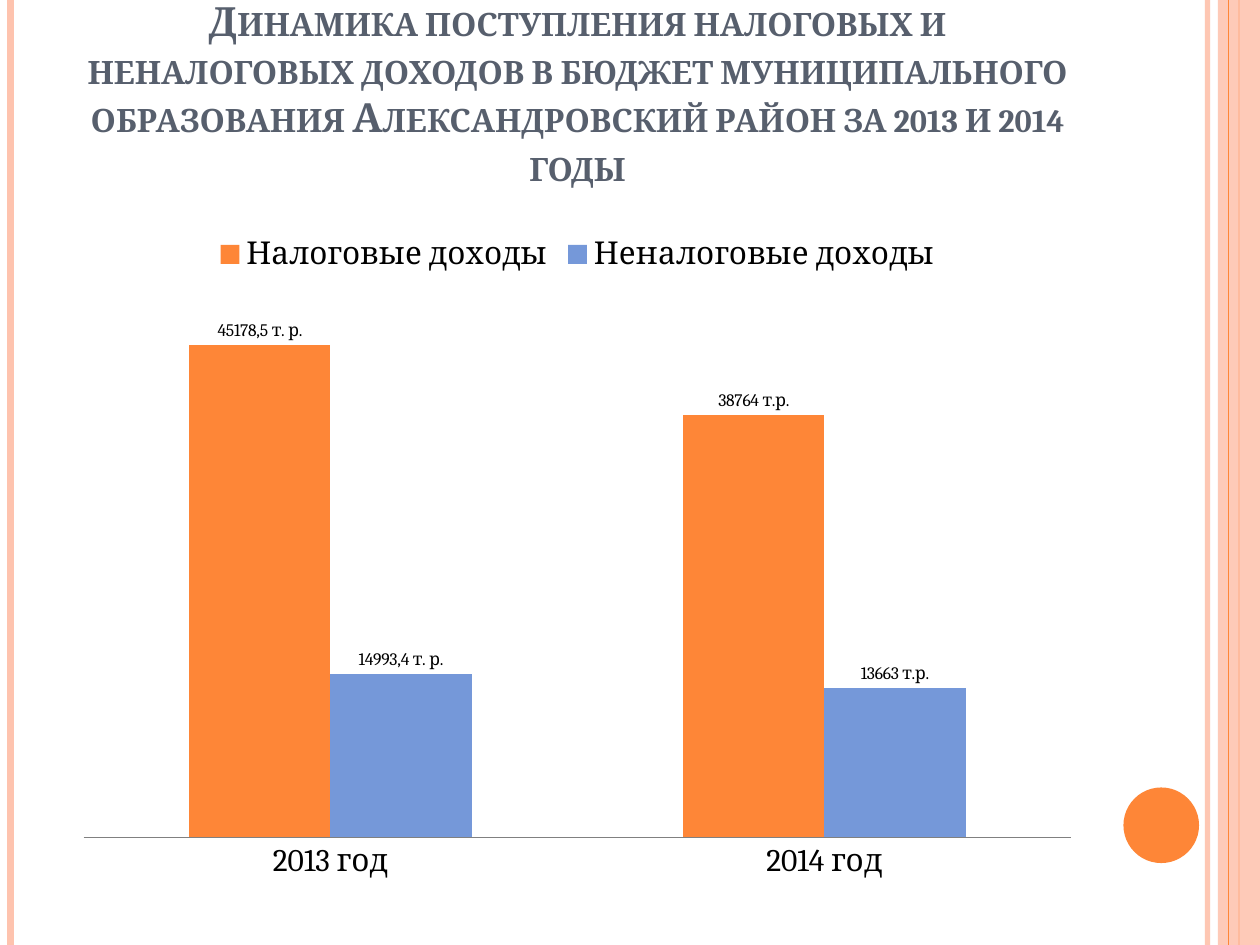
import dataclasses

import lxml.etree
import pptx
import pptx.chart.data
import pptx.dml.color
import pptx.enum.chart
import pptx.enum.shapes
import pptx.enum.text
import pptx.oxml.ns
import pptx.util

Pt = pptx.util.Pt
qn = pptx.oxml.ns.qn
FONT = "Cambria"
WIDTH, HEIGHT = 720, 540
COLORS = {
    "orange": "FE8637",
    "peach": "FEC3AE",
    "blue": "7598D9",
    "slate": "575F6D",
    "axis": "808080",
    "black": "000000",
}
TITLE = (
    "Динамика поступления налоговых и неналоговых доходов в бюджет "
    "муниципального образования Александровский район за 2013 и 2014 годы"
)
YEARS = ["2013 год", "2014 год"]


@dataclasses.dataclass
class Stripe:
    x: float
    weight: float
    color: str
    alpha: int = 100


@dataclasses.dataclass
class Income:
    name: str
    color: str
    values: list[float]
    labels: list[str]


BACK_STRIPES = [
    Stripe(690, 3, "peach", 93),
    Stripe(6, 4.5, "peach"),
    Stripe(708, 1.5, "orange"),
]
FRONT_STRIPE = Stripe(702, 0.75, "orange")
INCOMES = [
    Income("Налоговые доходы", "orange", [45178.5, 38764], ["45178,5 т. р.", "38764 т.р."]),
    Income("Неналоговые доходы", "blue", [14993.4, 13663], ["14993,4 т. р.", "13663 т.р."]),
]


def rgb(name: str) -> pptx.dml.color.RGBColor:
    """Return the named palette colour."""
    return pptx.dml.color.RGBColor.from_string(COLORS[name])


def set_alpha(element, percent: int) -> None:
    """Make the first colour inside the element translucent."""
    clr = next(element.iter(qn("a:srgbClr")))
    lxml.etree.SubElement(clr, qn("a:alpha")).set("val", str(percent * 1000))


def style_font(font, size: float, color: str = "black") -> None:
    """Apply the slide typeface, a size and a colour."""
    font.name = FONT
    font.size = Pt(size)
    font.color.rgb = rgb(color)


def add_stripe(s, stripe: Stripe) -> None:
    """Draw a vertical line over the full slide height."""
    line = s.shapes.add_connector(
        pptx.enum.shapes.MSO_CONNECTOR.STRAIGHT, Pt(stripe.x), 0, Pt(stripe.x), Pt(HEIGHT)
    )
    line.line.color.rgb = rgb(stripe.color)
    line.line.width = Pt(stripe.weight)
    sppr = line._element.spPr
    lxml.etree.SubElement(sppr, qn("a:effectLst"))
    if stripe.alpha < 100:
        set_alpha(sppr, stripe.alpha)


def add_block(s, kind, x: float, y: float, w: float, h: float, color: str):
    """Draw a filled shape without outline."""
    sp = s.shapes.add_shape(kind, Pt(x), Pt(y), Pt(w), Pt(h))
    sp.shadow.inherit = False
    sp.fill.solid()
    sp.fill.fore_color.rgb = rgb(color)
    sp.line.fill.background()
    return sp


def add_title(s) -> None:
    """Write the small-caps heading, anchored to the bottom of its box."""
    sp = s.shapes.add_textbox(Pt(36), Pt(21.6), Pt(588), Pt(90))
    tf = sp.text_frame
    tf.word_wrap = True
    tf.vertical_anchor = pptx.enum.text.MSO_ANCHOR.BOTTOM
    p = tf.paragraphs[0]
    p.alignment = pptx.enum.text.PP_ALIGN.CENTER
    r = p.add_run()
    r.text = TITLE
    style_font(r.font, 23, "slate")
    r.font.bold = True
    r.font._element.set("cap", "small")


def style_series(series, income: Income) -> None:
    """Colour a series and label each of its columns."""
    outside = pptx.enum.chart.XL_LABEL_POSITION.OUTSIDE_END
    series.format.fill.solid()
    series.format.fill.fore_color.rgb = rgb(income.color)
    series.invert_if_negative = False
    labels = series.data_labels
    labels.show_value = True
    labels.position = outside
    style_font(labels.font, 10)
    for point, text in zip(series.points, income.labels):
        label = point.data_label
        r = label.text_frame.paragraphs[0].add_run()
        r.text = text
        style_font(r.font, 10)
        label.position = outside


def add_income_chart(s) -> None:
    """Add the clustered column chart of incomes by year."""
    data = pptx.chart.data.CategoryChartData()
    data.categories = YEARS
    for income in INCOMES:
        data.add_series(income.name, income.values)
    chart = s.shapes.add_chart(
        pptx.enum.chart.XL_CHART_TYPE.COLUMN_CLUSTERED, Pt(36), Pt(126), Pt(588), Pt(384), data
    ).chart
    style_font(chart.font, 18)
    chart.has_title = False
    chart.has_legend = True
    chart.legend.position = pptx.enum.chart.XL_LEGEND_POSITION.TOP
    chart.legend.include_in_layout = False
    chart.value_axis.visible = False
    chart.value_axis.has_major_gridlines = False
    chart.value_axis.minimum_scale = 0
    chart.value_axis.maximum_scale = 50000
    chart.category_axis.major_tick_mark = pptx.enum.chart.XL_TICK_MARK.NONE
    chart.category_axis.format.line.color.rgb = rgb("axis")
    plot = chart.plots[0]
    plot.vary_by_categories = False
    plot.gap_width = 150
    plot.overlap = 0
    for series, income in zip(plot.series, INCOMES):
        style_series(series, income)


def main() -> None:
    """Build and save the slide."""
    prs = pptx.Presentation()
    prs.slide_width, prs.slide_height = Pt(WIDTH), Pt(HEIGHT)
    s = prs.slides.add_slide(prs.slide_layouts[6])
    for stripe in BACK_STRIPES:
        add_stripe(s, stripe)
    shapes = pptx.enum.shapes.MSO_SHAPE
    band = add_block(s, shapes.RECTANGLE, 696, 0, 24, HEIGHT, "peach")
    set_alpha(band._element.spPr, 87)
    add_stripe(s, FRONT_STRIPE)
    add_block(s, shapes.OVAL, 642, 450, 43.2, 43.2, "orange")
    add_title(s)
    add_income_chart(s)
    prs.save("out.pptx")


if __name__ == "__main__":
    main()
